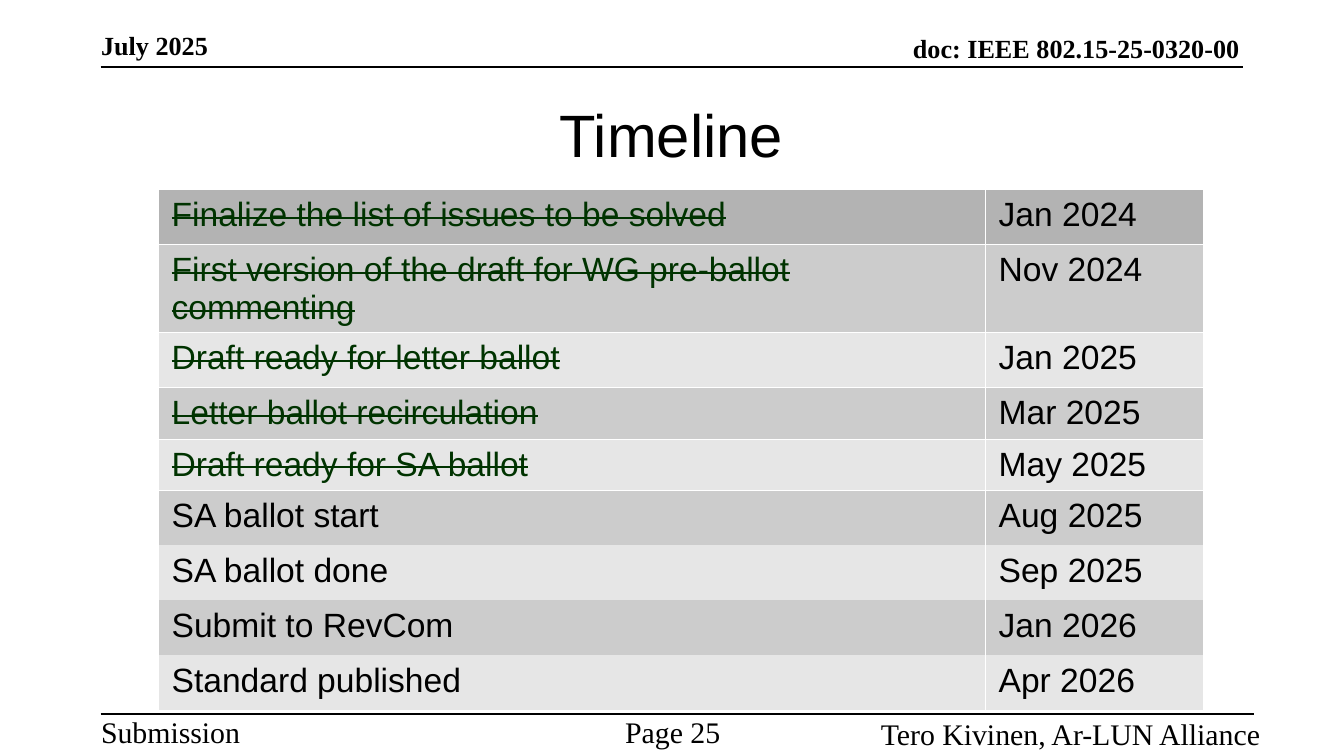
from dataclasses import dataclass

from lxml import etree
from pptx import Presentation
from pptx import util as u
from pptx.dml.color import RGBColor
from pptx.enum import shapes, text
from pptx.oxml import ns


@dataclass(frozen=True)
class Theme:
    serif: str = "Times New Roman"
    sans: str = "Arial"
    ink: str = "000000"
    done: str = "003300"
    border: str = "FFFFFF"
    head: str = "B3B3B3"
    bands: tuple = ("CCCCCC", "E6E6E6")
    header_size: int = 14
    footer_size: int = 16
    title_size: int = 32
    table_size: int = 18
    rule_width: float = 1
    border_width: float = 0.06


@dataclass(frozen=True)
class Label:
    text: str
    left: float
    top: float
    width: float
    height: float
    font: str
    size: int
    align: text.PP_ALIGN
    anchor: text.MSO_ANCHOR = text.MSO_ANCHOR.TOP
    bold: bool = False


@dataclass(frozen=True)
class Milestone:
    task: str
    date: str
    done: bool = False
    height: float = 1.04


T = Theme()
LEFT, CENTER, RIGHT = text.PP_ALIGN.LEFT, text.PP_ALIGN.CENTER, text.PP_ALIGN.RIGHT
MIDDLE, BOTTOM = text.MSO_ANCHOR.MIDDLE, text.MSO_ANCHOR.BOTTOM

LABELS = [
    Label("doc: IEEE 802.15-25-0320-00", 8.6, 0.82, 14.83, 0.38,
          T.serif, T.header_size, RIGHT, BOTTOM, True),
    Label("July 2025", 1.91, 0.76, 7.09, 0.38,
          T.serif, T.header_size, LEFT, BOTTOM, True),
    Label("Submission", 1.91, 13.49, 4.75, 0.58, T.serif, T.footer_size, LEFT),
    Label("Page 25 ", 10.41, 13.49, 4.75, 0.58, T.serif, T.footer_size, CENTER),
    Label("Tero Kivinen, Ar-LUN Alliance", 14.5, 13.51, 9.32, 0.58,
          T.serif, T.footer_size, RIGHT),
    Label("Timeline", 1.26, 1.22, 22.86, 2.62, T.sans, T.title_size, CENTER, MIDDLE),
]

RULES = [(1.9, 23.5, 1.27), (1.9, 23.7, 13.49)]

MILESTONES = [
    Milestone("Finalize the list of issues to be solved", "Jan 2024", True),
    Milestone("First version of the draft for WG pre-ballot commenting",
              "Nov 2024", True, 1.66),
    Milestone("Draft ready for letter ballot", "Jan 2025", True),
    Milestone("Letter ballot recirculation", "Mar 2025", True, 0.97),
    Milestone("Draft ready for SA ballot", "May 2025", True, 0.97),
    Milestone("SA ballot start", "Aug 2025"),
    Milestone("SA ballot done", "Sep 2025"),
    Milestone("Submit to RevCom", "Jan 2026"),
    Milestone("Standard published", "Apr 2026"),
]


def set_font(font, name: str, size: int, color: str, bold: bool = False) -> None:
    font.name, font.size, font.bold = name, u.Pt(size), bold
    font.color.rgb = RGBColor.from_string(color)


def add_label(s, label: Label) -> None:
    sp = s.shapes.add_textbox(u.Cm(label.left), u.Cm(label.top),
                              u.Cm(label.width), u.Cm(label.height))
    tf = sp.text_frame
    tf.word_wrap = True
    tf.vertical_anchor = label.anchor
    tf.margin_left = tf.margin_right = tf.margin_top = tf.margin_bottom = 0
    p = tf.paragraphs[0]
    p.text, p.alignment = label.text, label.align
    set_font(p.font, label.font, label.size, T.ink, label.bold)


def add_rule(s, left: float, right: float, y: float) -> None:
    line = s.shapes.add_connector(shapes.MSO_CONNECTOR.STRAIGHT,
                                  u.Cm(left), u.Cm(y), u.Cm(right), u.Cm(y))
    line.line.width = u.Pt(T.rule_width)
    line.line.color.rgb = RGBColor.from_string(T.ink)
    etree.SubElement(line._element.spPr, ns.qn("a:effectLst"))


def set_borders(cell, top: bool, bottom: bool) -> None:
    tcPr = cell._tc.get_or_add_tcPr()
    sides = {"lnL": True, "lnR": True, "lnT": top, "lnB": bottom}
    for i, (tag, shown) in enumerate(sides.items()):
        ln = etree.Element(ns.qn(f"a:{tag}"), w=str(u.Pt(T.border_width)))
        if shown:
            fill = etree.SubElement(ln, ns.qn("a:solidFill"))
            etree.SubElement(fill, ns.qn("a:srgbClr"), val=T.border)
        else:
            etree.SubElement(ln, ns.qn("a:noFill"))
        tcPr.insert(i, ln)


def fill_cell(cell, words: str, fill: str, done: bool) -> None:
    cell.margin_bottom = 0
    cell.fill.solid()
    cell.fill.fore_color.rgb = RGBColor.from_string(fill)
    p = cell.text_frame.paragraphs[0]
    r = p.add_run()
    r.text = words
    set_font(p.font, T.sans, T.table_size, T.done if done else T.ink)
    if done:
        r.font._element.set("strike", "sngStrike")


def add_timeline(s, milestones: list[Milestone]) -> None:
    widths = (15.63, 4.12)
    height = sum(m.height for m in milestones)
    table = s.shapes.add_table(len(milestones), len(widths), u.Cm(2.99), u.Cm(3.58),
                               u.Cm(sum(widths)), u.Cm(height)).table
    table.first_row = table.horz_banding = False
    for column, width in zip(table.columns, widths):
        column.width = u.Cm(width)
    last_done = max(i for i, m in enumerate(milestones) if m.done)
    for i, m in enumerate(milestones):
        table.rows[i].height = u.Cm(m.height)
        fill = T.bands[(i - 1) % 2] if i else T.head
        for j, (words, done) in enumerate([(m.task, m.done), (m.date, False)]):
            cell = table.cell(i, j)
            fill_cell(cell, words, fill, done)
            set_borders(cell, i <= last_done + 1,
                        i <= last_done or i == len(milestones) - 1)


def main() -> None:
    prs = Presentation()
    prs.slide_width, prs.slide_height = u.Cm(25.4), u.Cm(14.28)
    s = prs.slides.add_slide(prs.slide_layouts[6])
    for label in LABELS:
        add_label(s, label)
    for rule in RULES:
        add_rule(s, *rule)
    add_timeline(s, MILESTONES)
    prs.save("out.pptx")


if __name__ == "__main__":
    main()
